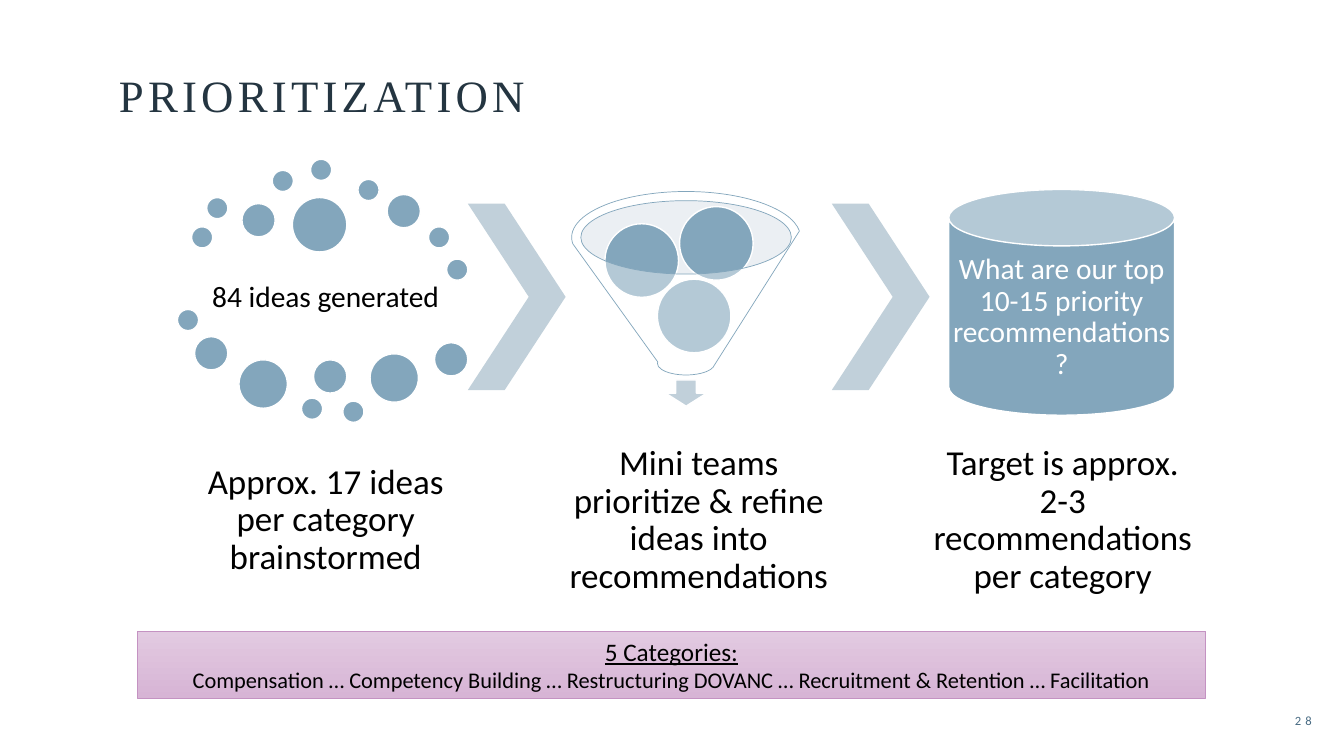
from lxml import etree
from pptx import Presentation
from pptx import util as u
from pptx.dml.color import RGBColor
from pptx.enum import shapes, text
from pptx.oxml.ns import qn

BLUE, PALE, WHITE, BLACK = "83A6BC", "C1D0DA", "FFFFFF", "000000"
KIND = shapes.MSO_SHAPE

prs = Presentation()
prs.slide_width, prs.slide_height = u.Inches(13.33), u.Inches(7.5)
slide = prs.slides.add_slide(prs.slide_layouts[5])


def add_part(kind, box, fill, line=WHITE, width=1, opacity=100):
    part = slide.shapes.add_shape(kind, *map(u.Inches, box))
    part.shadow.inherit = False
    part.fill.solid()
    part.fill.fore_color.rgb = RGBColor.from_string(fill)
    if opacity < 100:
        color = part.fill._xPr.find(".//" + qn("a:srgbClr"))
        etree.SubElement(color, qn("a:alpha")).set("val", str(opacity * 1000))
    if line:
        part.line.color.rgb = RGBColor.from_string(line)
        part.line.width = u.Pt(width)
    else:
        part.line.fill.background()
    return part


def write(frame, words, size, color=BLACK, align="CENTER", anchor="MIDDLE",
          font="Calibri", inset=0.03, leading=0.9, tracking=0):
    frame.word_wrap = True
    frame.auto_size = text.MSO_AUTO_SIZE.NONE
    frame.vertical_anchor = text.MSO_ANCHOR[anchor]
    frame.margin_left = frame.margin_right = u.Inches(inset)
    frame.margin_top = frame.margin_bottom = u.Inches(min(inset, 0.05))
    paragraph = frame.paragraphs[0]
    paragraph.text = words
    paragraph.alignment = text.PP_ALIGN[align]
    paragraph.line_spacing = leading
    paragraph.font.name, paragraph.font.size = font, u.Pt(size)
    paragraph.font.color.rgb = RGBColor.from_string(color)
    if tracking:
        paragraph.runs[0].font._element.set("spc", str(tracking * 100))


# Title
title = slide.shapes.title
title.left, title.top, title.width, title.height = map(u.Inches, (1.08, 0.57, 10.38, 0.69))
write(title.text_frame, "PRIORITIZATION", 32, "243541", "LEFT", "BOTTOM",
      "Times New Roman", inset=0.1, tracking=3)

# Funnel with three ideas inside
add_part(KIND.OVAL, (5.76, 1.99, 2.09, 0.73), "CDD8E1", None, opacity=40)
add_part(KIND.DOWN_ARROW, (6.6, 3.77, 0.41, 0.26), PALE)
for left, top in [(6.52, 2.77), (6, 2.22), (6.74, 2.05)]:
    add_part(KIND.OVAL, (left, top, 0.73, 0.73), BLUE)
add_part(KIND.FUNNEL, (5.67, 1.9, 2.27, 1.82), WHITE, BLUE, 0.5, opacity=40)

# Cloud of ideas: dot positions by diameter
idea_dots = {
    0.21: [(1.9, 2.25), (2.05, 1.96), (2.7, 1.69), (3.08, 1.58), (3.55, 1.78), (4.25, 2.25),
           (4.43, 2.57), (1.76, 3.07), (2.99, 3.95), (3.4, 3.98)],
    0.33: [(2.4, 2.02), (3.84, 1.93), (1.93, 3.34), (3.11, 3.57), (4.31, 3.4)],
    0.48: [(2.37, 3.57), (3.67, 3.51)],
    0.54: [(2.9, 1.96)],
}
for diameter, spots in idea_dots.items():
    for left, top in spots:
        add_part(KIND.OVAL, (left, top, diameter, diameter), BLUE)

# Chevrons between the stages
for left in (4.64, 8.25):
    chevron = add_part(KIND.CHEVRON, (left, 2.02, 0.97, 1.85), PALE, None)
    chevron.adjustments[0] = 0.623

# Target cylinder
add_part(KIND.CAN, (9.41, 1.88, 2.24, 2.24), BLUE)

# Stage labels and captions
labels = [
    ((1.91, 2.52, 2.64, 0.87), "84 ideas generated", 21, BLACK, 0.03),
    ((9.41, 2.45, 2.24, 1.4), "What are our top 10-15 priority recommendations?", 21, WHITE, 0),
]
captions = {
    1.91: "Approx. 17 ideas per category brainstormed",
    5.61: "Mini teams prioritize & refine ideas into recommendations",
    9.22: "Target is approx. 2-3 recommendations per category",
}
labels += [((left, 4.35, 2.64, 1.63), words, 25, BLACK, 0.03) for left, words in captions.items()]
for box, words, size, color, inset in labels:
    label = slide.shapes.add_textbox(*map(u.Inches, box))
    write(label.text_frame, words, size, color, inset=inset)

# Category banner
banner = add_part(KIND.RECTANGLE, (1.36, 6.26, 10.6, 0.67), WHITE, "C492C2", 0.5)
banner.fill.gradient()
banner.fill.gradient_angle = 270
for stop, color in zip(banner.fill.gradient_stops, ("E2CAE1", "D7B4D5")):
    stop.color.rgb = RGBColor.from_string(color)
write(banner.text_frame, "5 Categories:", 18, inset=0.1, leading=1)
banner.text_frame.paragraphs[0].font.underline = True
categories = banner.text_frame.add_paragraph()
categories.text = " … ".join(["Compensation", "Competency Building", "Restructuring DOVANC",
                              "Recruitment & Retention", "Facilitation"])
categories.alignment = text.PP_ALIGN.CENTER
categories.font.name, categories.font.size = "Calibri", u.Pt(16)
categories.font.color.rgb = RGBColor.from_string(BLACK)

# Slide number
number = slide.shapes.add_textbox(*map(u.Inches, (12.16, 6.95, 0.95, 0.4)))
write(number.text_frame, "28", 9, "486B83", "RIGHT", inset=0.1, leading=1, tracking=3)

prs.save("out.pptx")
